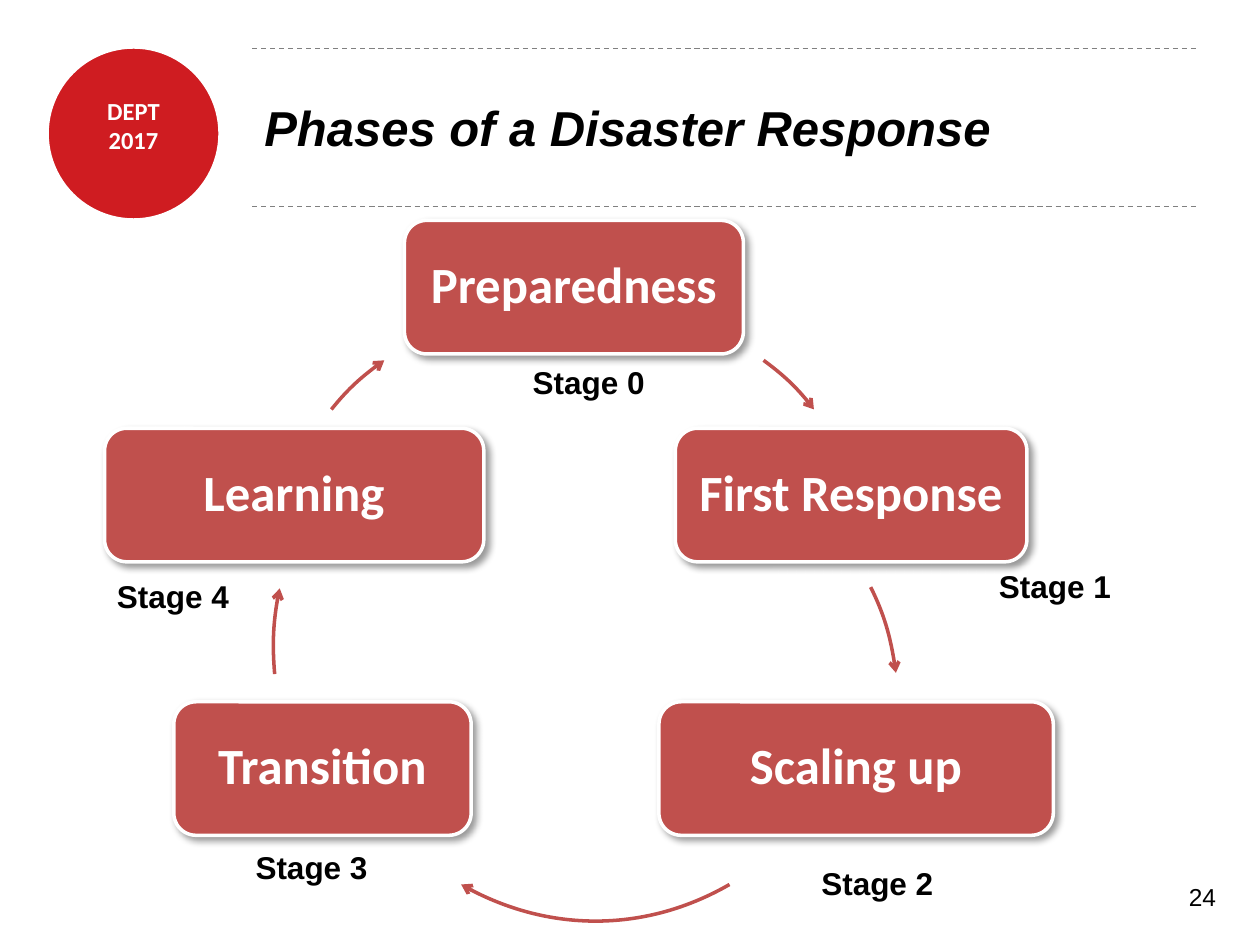
"""Build a slide that shows the phases of a disaster response as a cycle."""
import pptx
import pptx.util
import pptx.dml.color
import pptx.enum.dml
import pptx.enum.shapes
import pptx.enum.text
import pptx.oxml

Pt = pptx.util.Pt
RGB = pptx.dml.color.RGBColor.from_string
KIND = pptx.enum.shapes.MSO_SHAPE
ALIGN = pptx.enum.text.PP_ALIGN
NS = 'xmlns:a="http://schemas.openxmlformats.org/drawingml/2006/main"'
HUES = {"badge": "CF1C21", "phase": "C0504D", "rule": "808080", "white": "FFFFFF", "black": "000000"}

deck = pptx.Presentation()
deck.slide_width = pptx.util.Inches(10)
deck.slide_height = pptx.util.Inches(7.5)
slide = deck.slides.add_slide(deck.slide_layouts[6])
shapes = slide.shapes


def scale(*shares):
    """Turn x, y, x, y... in percent of the slide into lengths."""
    sides = (deck.slide_width, deck.slide_height)
    return [round(share * sides[i % 2] / 100) for i, share in enumerate(shares)]


def write(text, box, shape=None, size=18, font="Arial", hue="black", bold=True, slant=False,
          align=ALIGN.LEFT, inset=(7.2, 3.6), wrap=True, space=1.0, middle=False):
    """Write text into the shape, or into a new text box."""
    frame = (shape or shapes.add_textbox(*scale(*box))).text_frame
    frame.word_wrap = wrap
    frame.margin_left = frame.margin_right = Pt(inset[0])
    frame.margin_top = frame.margin_bottom = Pt(inset[1])
    anchor = pptx.enum.text.MSO_ANCHOR
    frame.vertical_anchor = anchor.MIDDLE if middle else anchor.TOP
    frame.text = text
    for para in frame.paragraphs:
        para.alignment = align
        para.line_spacing = space
        face = para.runs[0].font
        face.size, face.name, face.bold, face.italic = Pt(size), font, bold, slant
        face.color.rgb = RGB(HUES[hue])


badge = shapes.add_shape(KIND.OVAL, *scale(3.7, 4.93, 13.8, 18.4))
badge.shadow.inherit = False
badge.fill.solid()
badge.fill.fore_color.rgb = RGB(HUES["badge"])
badge.line.color.rgb = RGB(HUES["white"])
badge.line.width = Pt(2.5)
write("DEPT\n2017", (4.3, 10.13, 12.6, 6.27), size=14, font="Calibri", hue="white",
      align=ALIGN.CENTER, inset=(0, 0))

for top in (5.15, 21.87):
    rule = shapes.add_connector(pptx.enum.shapes.MSO_CONNECTOR.STRAIGHT, *scale(20, top, 95, top))
    rule.line.color.rgb = RGB(HUES["rule"])
    rule.line.width = Pt(0.75)
    rule.line.dash_style = pptx.enum.dml.MSO_LINE.DASH
    rule._element.spPr.append(pptx.oxml.parse_xml(f"<a:effectLst {NS}/>"))

write("Phases of a Disaster Response", (20, 5.07, 75, 16.67), size=28, slant=True, middle=True)

shade = (f'<a:effectLst {NS}><a:outerShdw blurRad="50800" dist="38100" dir="2700000">'
         '<a:srgbClr val="000000"><a:alpha val="40000"/></a:srgbClr></a:outerShdw></a:effectLst>')
phases = [
    ("Preparedness", 32.1, 23.33, 26.9, 41.3, 37.73),
    ("First Response", 53.6, 45.33, 27.9, 78.3, 59.33),
    ("Scaling up", 52.3, 74.27, 31.3, 64.2, 90.8),
    ("Transition", 13.8, 74.27, 23.6, 19.3, 89.07),
    ("Learning", 8.3, 45.33, 30.1, 8.3, 60.4),
]
for stage, (name, left, top, width, tag_x, tag_y) in enumerate(phases):
    box = (left, top, width, 14.13)
    card = shapes.add_shape(KIND.ROUNDED_RECTANGLE, *scale(*box))
    card.fill.solid()
    card.fill.fore_color.rgb = RGB(HUES["phase"])
    card.line.color.rgb = RGB(HUES["white"])
    card.line.width = Pt(2)
    card._element.spPr.append(pptx.oxml.parse_xml(shade))
    write(name, box, card, size=29, font="Calibri", hue="white", align=ALIGN.CENTER,
          inset=(8.64, 8.64), wrap=False, space=0.9, middle=True)
    write(f"Stage {stage}", (tag_x, tag_y, 11, 5.33), wrap=False)

wide, high = scale(42.2, 56.27)
arcs = [
    ((27.1, 32.8), (60.6, 38.13, 62.1, 39.6, 63.5, 41.33, 64.6, 43.33)),
    ((28.9, 46.13), (69.1, 62.13, 70.2, 65.07, 70.8, 68.13, 71.1, 71.2)),
    ((26.1, 41.07), (57.9, 93.6, 51.3, 98.67, 43.2, 98.67, 36.6, 93.6)),
    ((21.7, 40.67), (21.8, 71.33, 21.6, 68.27, 21.7, 65.2, 22.2, 62.27)),
    ((21.4, 33.2), (26.3, 43.33, 27.5, 41.33, 28.9, 39.6, 30.5, 38.13)),
]
for corner, arc in arcs:
    left, top = scale(*corner)
    knots = scale(*arc)
    dots = [f'<a:pt x="{x - left}" y="{y - top}"/>' for x, y in zip(knots[::2], knots[1::2])]
    curve = (f'<a:path {NS} w="{wide}" h="{high}" fill="none"><a:moveTo>{dots[0]}</a:moveTo>'
             f'<a:cubicBezTo>{"".join(dots[1:])}</a:cubicBezTo></a:path>')
    build = shapes.build_freeform(left, top)
    build.add_line_segments([(left + wide, top + high)], close=False)
    arrow = build.convert_to_shape()
    track = arrow._element.xpath(".//a:path")[0]
    track.getparent().replace(track, pptx.oxml.parse_xml(curve))
    arrow.shadow.inherit = False
    arrow.fill.background()
    arrow.line.color.rgb = RGB(HUES["phase"])
    arrow.line.width = Pt(2)
    arrow.line._get_or_add_ln().append(pptx.oxml.parse_xml(f'<a:tailEnd {NS} type="arrow"/>'))

write("24", (74.2, 92.67, 23.3, 5.33), size=14, bold=False, align=ALIGN.RIGHT)

deck.save("out.pptx")
